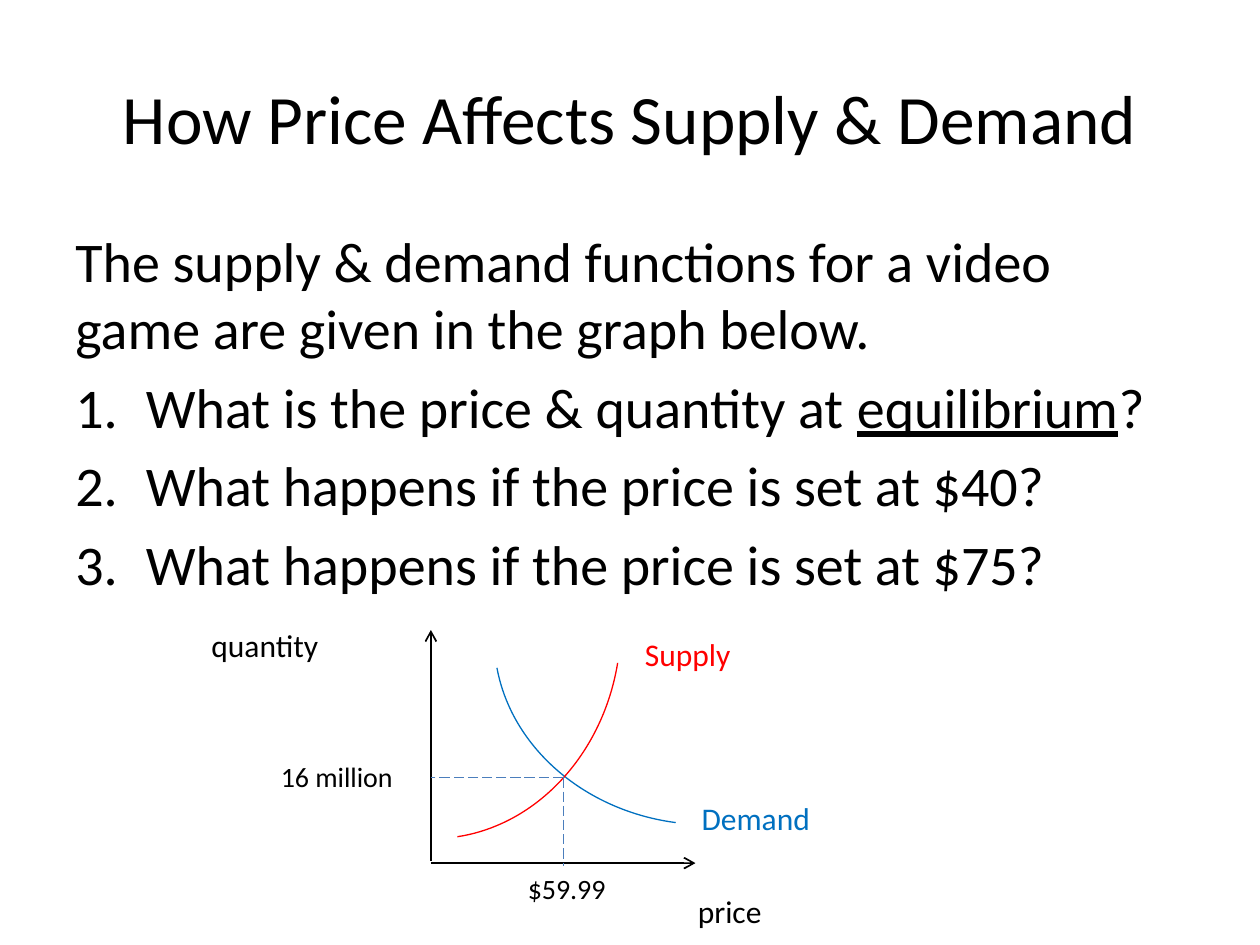
from lxml import etree
from pptx import Presentation, util as u
from pptx.dml.color import RGBColor
from pptx.enum import dml, shapes, text
from pptx.oxml.ns import qn

INK = {"black": "000000", "blue": "0070C0", "red": "FF0000", "dash": "4B7EBC"}
FONT = "Calibri"


def color(name):
    return RGBColor.from_string(INK[name])


def style(par, size, ink="black"):
    par.font.name = FONT
    par.font.size = u.Pt(size)
    par.font.color.rgb = color(ink)


def add_box(parent, box):
    frame = parent.add_textbox(*map(u.Inches, box)).text_frame
    frame.word_wrap = True
    return frame


def add_label(parent, words, box, size=18, ink="black"):
    frame = add_box(parent, box)
    par = frame.paragraphs[0]
    par.text = words
    style(par, size, ink)
    return frame


def add_title(parent, words):
    frame = add_label(parent, words, (0.5, 0.3, 9, 1.25), 39.6)
    frame.vertical_anchor = text.MSO_ANCHOR.MIDDLE
    frame.paragraphs[0].alignment = text.PP_ALIGN.CENTER


def number(par):
    props = par._p.get_or_add_pPr()
    indent = u.Inches(0.56)
    props.set("marL", str(indent))
    props.set("indent", str(-indent))
    etree.SubElement(props, qn("a:buFont"), typeface="+mj-lt")
    etree.SubElement(props, qn("a:buAutoNum"), type="arabicPeriod")


def add_body(parent, intro, items):
    frame = add_box(parent, (0.5, 1.75, 9, 4.95))
    for i, parts in enumerate([(intro,), *items]):
        par = frame.paragraphs[0] if i == 0 else frame.add_paragraph()
        par.space_before = u.Pt(6.4)
        if i:
            number(par)
        style(par, 32)
        for j, part in enumerate(parts):
            run = par.add_run()
            run.text = part
            if j == 1:
                run.font.underline = True


def add_line(parent, start, end, ink, width, arrow=False):
    line = parent.add_connector(
        shapes.MSO_CONNECTOR.STRAIGHT, *map(u.Inches, (*start, *end)))
    line.line.color.rgb = color(ink)
    line.line.width = u.Pt(width)
    if arrow:
        etree.SubElement(line.line._get_or_add_ln(), qn("a:tailEnd"), type="arrow")
    else:
        line.line.dash_style = dml.MSO_LINE.LONG_DASH
    etree.SubElement(line._element.spPr, qn("a:effectLst"))


def add_curve(parent, left, top, turn, ink):
    arc = parent.add_shape(
        shapes.MSO_SHAPE.ARC, *map(u.Inches, (left, top, 3.25, 2.83)))
    arc.adjustments[0] = 162
    arc.adjustments[1] = 207.81
    arc.rotation = turn
    arc.fill.background()
    arc.line.color.rgb = color(ink)
    arc.line.width = u.Pt(0.75)
    arc.shadow.inherit = False


def add_graph(parent):
    graph = parent.add_group_shape().shapes
    add_line(graph, (3.42, 6.83), (3.42, 5), "black", 1, True)
    add_line(graph, (3.42, 6.85), (5.52, 6.85), "black", 1, True)
    add_curve(graph, 3.92, 3.71, 187.4, "blue")
    add_curve(graph, 1.88, 3.62, 99.2, "red")
    add_label(graph, "Supply", (5.02, 4.99, 2.17, 0.42), ink="red")
    add_label(graph, "Demand", (5.47, 6.29, 2.17, 0.42), ink="blue")
    add_label(graph, "price", (5.44, 7.03, 2.17, 0.42))
    add_label(graph, "quantity", (1.58, 4.92, 1.24, 0.42))

    cross = (4.47, 6.17)
    for end in ((4.47, 6.87), (3.42, 6.17)):
        add_line(parent, cross, end, "dash", 0.75)
    add_label(parent, "$59.99", (4.09, 6.87, 1.08, 0.37), 16)
    add_label(parent, "16 million", (2.13, 5.98, 1.28, 0.37), 16)


def main():
    deck = Presentation()
    deck.slide_width, deck.slide_height = u.Inches(10), u.Inches(7.5)
    parent = deck.slides.add_slide(deck.slide_layouts[6]).shapes
    add_title(parent, "How Price Affects Supply & Demand")
    add_body(
        parent,
        "The supply & demand functions for a video game are given in the graph below.",
        [("What is the price & quantity at ", "equilibrium", "?"),
         ("What happens if the price is set at $40?",),
         ("What happens if the price is set at $75?",)])
    add_graph(parent)
    deck.save("out.pptx")


if __name__ == "__main__":
    main()
